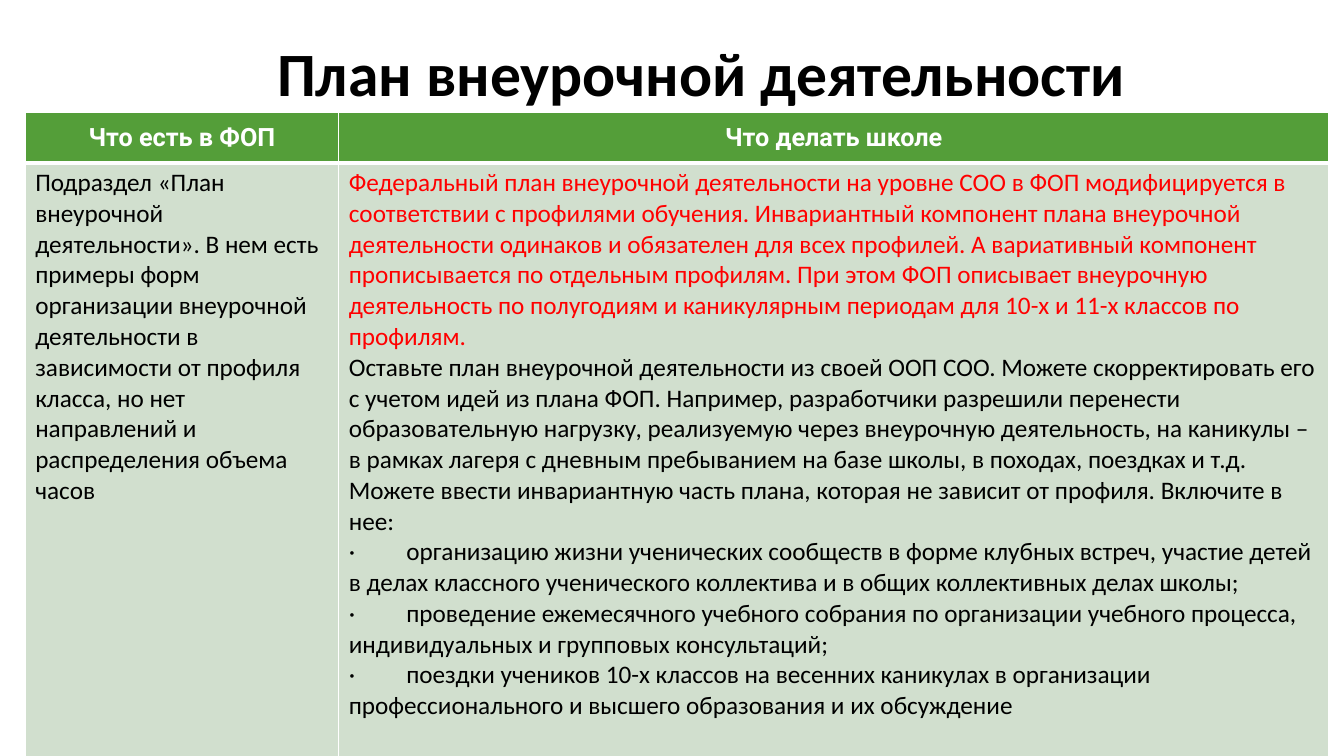
from lxml import etree
from pptx import Presentation
from pptx.dml.color import RGBColor
from pptx.enum.text import MSO_ANCHOR, PP_ALIGN
from pptx.oxml.ns import qn
from pptx.util import Inches, Pt

CENTER, LEFT = PP_ALIGN.CENTER, PP_ALIGN.LEFT
MIDDLE = MSO_ANCHOR.MIDDLE
WHITE = RGBColor(0xFF, 0xFF, 0xFF)
BLACK = RGBColor(0, 0, 0)
RED = RGBColor(0xFF, 0, 0)
GREEN = RGBColor(0x54, 0x9E, 0x39)
PALE = RGBColor(0xD1, 0xDF, 0xCE)

HEADS = ["Что есть в ФОП", "Что делать школе"]
PLAN = (
    "Подраздел «План внеурочной деятельности». В нем есть примеры форм "
    "организации внеурочной деятельности в зависимости от профиля класса, "
    "но нет направлений и распределения объема часов"
)
FEDERAL = (
    "Федеральный план внеурочной деятельности на уровне СОО в ФОП "
    "модифицируется в соответствии с профилями обучения. Инвариантный "
    "компонент плана внеурочной деятельности одинаков и обязателен для "
    "всех профилей. А вариативный компонент прописывается по отдельным "
    "профилям. При этом ФОП описывает внеурочную деятельность "
    "по полугодиям и каникулярным периодам для 10-х и 11-х классов "
    "по профилям."
)
ADVICE = (
    "Оставьте план внеурочной деятельности из своей ООП СОО. Можете "
    "скорректировать его с учетом идей из плана ФОП. Например, разработчики "
    "разрешили перенести образовательную нагрузку, реализуемую через "
    "внеурочную деятельность, на каникулы – в рамках лагеря с дневным "
    "пребыванием на базе школы, в походах, поездках и т.д. Можете ввести "
    "инвариантную часть плана, которая не зависит от профиля. Включите в нее:"
)
ITEMS = [
    "организацию жизни ученических сообществ в форме клубных встреч, участие "
    "детей в делах классного ученического коллектива и в общих коллективных "
    "делах школы;",
    "проведение ежемесячного учебного собрания по организации учебного "
    "процесса, индивидуальных и групповых консультаций;",
    "поездки учеников 10-х классов на весенних каникулах в организации "
    "профессионального и высшего образования и их обсуждение",
]


def add_text(para, text, size, font, color, bold, align):
    para.alignment = align
    run = para.add_run()
    run.text = text
    run.font.size = Pt(size)
    run.font.name = font
    run.font.bold = bold
    run.font.color.rgb = color


def style_cell(cell, fill, base):
    """Set margins, white borders (base is the bottom width) and fill."""
    cell.margin_left = cell.margin_right = Inches(0.1)
    cell.margin_top = cell.margin_bottom = Inches(0.1 if fill == GREEN else 0.05)
    props = cell._tc.get_or_add_tcPr()
    for side, width in zip("LRTB", (1, 1, 1, base)):
        line = etree.SubElement(props, qn(f"a:ln{side}"), w=str(Pt(width)))
        solid = etree.SubElement(line, qn("a:solidFill"))
        etree.SubElement(solid, qn("a:srgbClr"), val=str(WHITE))
    cell.fill.solid()
    cell.fill.fore_color.rgb = fill


prs = Presentation()
prs.slide_width, prs.slide_height = Inches(13.33), Inches(7.5)
slide = prs.slides.add_slide(prs.slide_layouts[5])

title = slide.shapes.title
title.left, title.top = Inches(1.21), Inches(0.03)
title.width, title.height = Inches(11.5), Inches(1.45)
frame = title.text_frame
frame.vertical_anchor = MIDDLE
frame.paragraphs[0].line_spacing = 0.9
add_text(frame.paragraphs[0], "План внеурочной деятельности", 44, "Calibri",
         BLACK, True, CENTER)

table = slide.shapes.add_table(2, 2, Inches(0.25), Inches(1.12),
                               Inches(12.93), Inches(6.38)).table
for col, width in zip(table.columns, (3.11, 9.82)):
    col.width = Inches(width)
for row, height in zip(table.rows, (0.49, 5.89)):
    row.height = Inches(height)

for col, head in enumerate(HEADS):
    cell = table.cell(0, col)
    style_cell(cell, GREEN, 3)
    add_text(cell.text_frame.paragraphs[0], head, 18, "Roboto", WHITE, True, CENTER)

bodies = [
    [(PLAN, BLACK)],
    [(FEDERAL, RED), (ADVICE, BLACK)] + [("·\t" + item, BLACK) for item in ITEMS],
]
for col, body in enumerate(bodies):
    cell = table.cell(1, col)
    style_cell(cell, PALE, 1)
    frame = cell.text_frame
    for num, (text, color) in enumerate(body):
        para = frame.add_paragraph() if num else frame.paragraphs[0]
        add_text(para, text, 18, "Calibri", color, False, LEFT)
        if text.startswith("·"):
            tabs = etree.SubElement(para._p.get_or_add_pPr(), qn("a:tabLst"))
            etree.SubElement(tabs, qn("a:tab"), pos=str(Inches(0.57)), algn="l")

prs.save("out.pptx")
